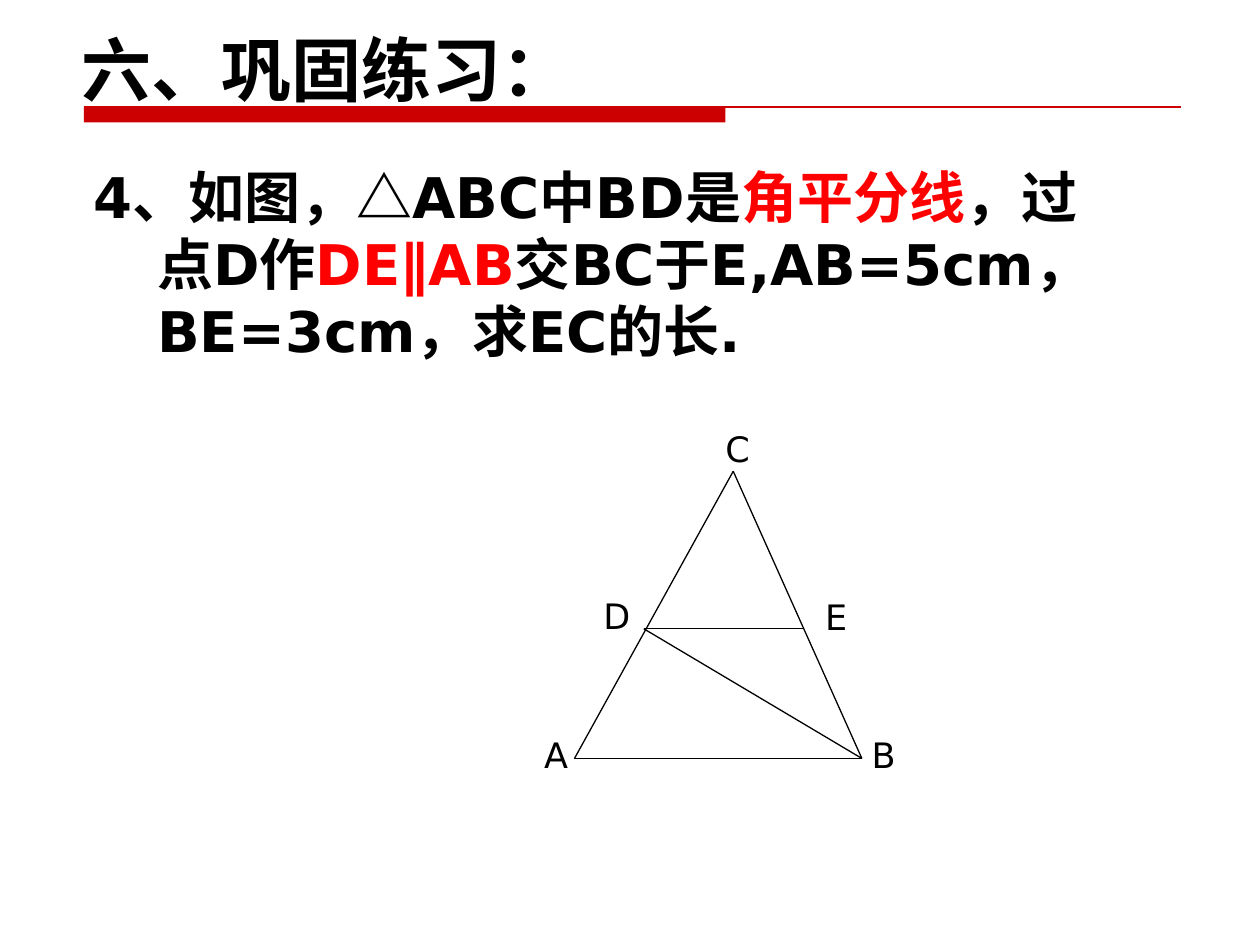
"""Build a geometry exercise slide with a problem statement and a labelled triangle."""
from dataclasses import dataclass
from typing import Any

import pptx
import pptx.dml.color
import pptx.enum.shapes
import pptx.enum.text
import pptx.oxml.ns
import pptx.util
from lxml import etree

Pt = pptx.util.Pt
COLOURS = {"text": "000000", "accent": "FF0000", "rule": "CC0000"}
HEADING = {"name": "DejaVu Sans", "size": Pt(40), "bold": True}
PROBLEM = {"name": "DejaVu Sans", "size": Pt(32), "bold": True}
VERTEX = {"name": "DejaVu Sans", "size": Pt(20), "bold": False}
WRAPPED = {"word_wrap": True}
BOTTOM = {"word_wrap": True, "vertical_anchor": pptx.enum.text.MSO_ANCHOR.BOTTOM}
FITTED = {"word_wrap": False, "auto_size": pptx.enum.text.MSO_AUTO_SIZE.SHAPE_TO_FIT_TEXT}


@dataclass(frozen=True)
class Phrase:
    text: str
    colour: str = "text"


@dataclass(frozen=True)
class Box:
    left: float
    top: float
    width: float
    height: float


@dataclass(frozen=True)
class Vertex:
    x: float
    y: float
    label: Box


@dataclass(frozen=True)
class Segment:
    start: str
    end: str


TITLE = [Phrase("六、巩固练习：")]
STATEMENT = [
    Phrase("4、如图，△ABC中BD是"),
    Phrase("角平分线", "accent"),
    Phrase("，过点D作"),
    Phrase("DE∥AB", "accent"),
    Phrase("交BC于E,AB=5cm， BE=3cm，求EC的长."),
]
VERTICES = {
    "A": Vertex(328.3, 433.4, Box(303.8, 415.4, 28.1, 31)),
    "B": Vertex(492.5, 433.4, Box(491, 415.4, 28.1, 31)),
    "C": Vertex(419, 269.3, Box(407.5, 240.5, 28.8, 31)),
    "D": Vertex(367.9, 359.3, Box(337.7, 336.2, 29.5, 31)),
    "E": Vertex(458.6, 359.3, Box(464.4, 337, 27.4, 31)),
}
SEGMENTS = [Segment(*ends) for ends in ("CA", "AB", "CB", "BD", "DE")]


def rgb(colour: str) -> pptx.dml.color.RGBColor:
    """Return the named colour."""
    return pptx.dml.color.RGBColor.from_string(COLOURS[colour])


def apply(target: Any, values: dict[str, Any]) -> None:
    """Set each format value on the target."""
    for attribute, value in values.items():
        setattr(target, attribute, value)


def draw_text(shapes: Any, box: Box, phrases: list[Phrase],
              font: dict[str, Any], frame: dict[str, Any]) -> Any:
    """Write phrases in one paragraph and return it."""
    area = shapes.add_textbox(Pt(box.left), Pt(box.top), Pt(box.width), Pt(box.height))
    apply(area.text_frame, frame)
    paragraph = area.text_frame.paragraphs[0]
    for phrase in phrases:
        run = paragraph.add_run()
        run.text = phrase.text
        apply(run.font, font)
        run.font.color.rgb = rgb(phrase.colour)
    return paragraph


def draw_line(shapes: Any, x1: float, y1: float, x2: float, y2: float, colour: str) -> None:
    """Draw a thin straight line without a shadow."""
    line = shapes.add_connector(
        pptx.enum.shapes.MSO_CONNECTOR.STRAIGHT, Pt(x1), Pt(y1), Pt(x2), Pt(y2))
    line.line.width = Pt(0.75)
    line.line.color.rgb = rgb(colour)
    etree.SubElement(line._element.spPr, pptx.oxml.ns.qn("a:effectLst"))


def draw_title_rule(shapes: Any) -> None:
    """Draw the thick bar and the thin line under the title."""
    left, top = 48, 61.2
    bar = shapes.add_shape(
        pptx.enum.shapes.MSO_SHAPE.RECTANGLE, Pt(left), Pt(top), Pt(366.5), Pt(8.7))
    bar.shadow.inherit = False
    bar.fill.solid()
    bar.fill.fore_color.rgb = rgb("rule")
    bar.line.fill.background()
    draw_line(shapes, left, top, 674.6, top, "rule")


def draw_triangle(shapes: Any) -> None:
    """Draw the segments and vertex labels as one group."""
    triangle = shapes.add_group_shape().shapes
    for segment in SEGMENTS:
        start, end = VERTICES[segment.start], VERTICES[segment.end]
        draw_line(triangle, start.x, start.y, end.x, end.y, "text")
    for letter, vertex in VERTICES.items():
        draw_text(triangle, vertex.label, [Phrase(letter)], VERTEX, FITTED)


def main() -> None:
    """Build and save the slide."""
    deck = pptx.Presentation()
    apply(deck, {"slide_width": Pt(720), "slide_height": Pt(540)})
    shapes = deck.slides.add_slide(deck.slide_layouts[6]).shapes
    draw_title_rule(shapes)
    statement = draw_text(shapes, Box(46.1, 89.3, 608.4, 170.6), STATEMENT, PROBLEM, WRAPPED)
    properties = statement._p.get_or_add_pPr()
    properties.set("marL", str(Pt(36.7)))
    properties.set("indent", str(Pt(-36.7)))
    draw_triangle(shapes)
    draw_text(shapes, Box(39.6, 13.7, 620.6, 53.3), TITLE, HEADING, BOTTOM)
    deck.save("out.pptx")


if __name__ == "__main__":
    main()
